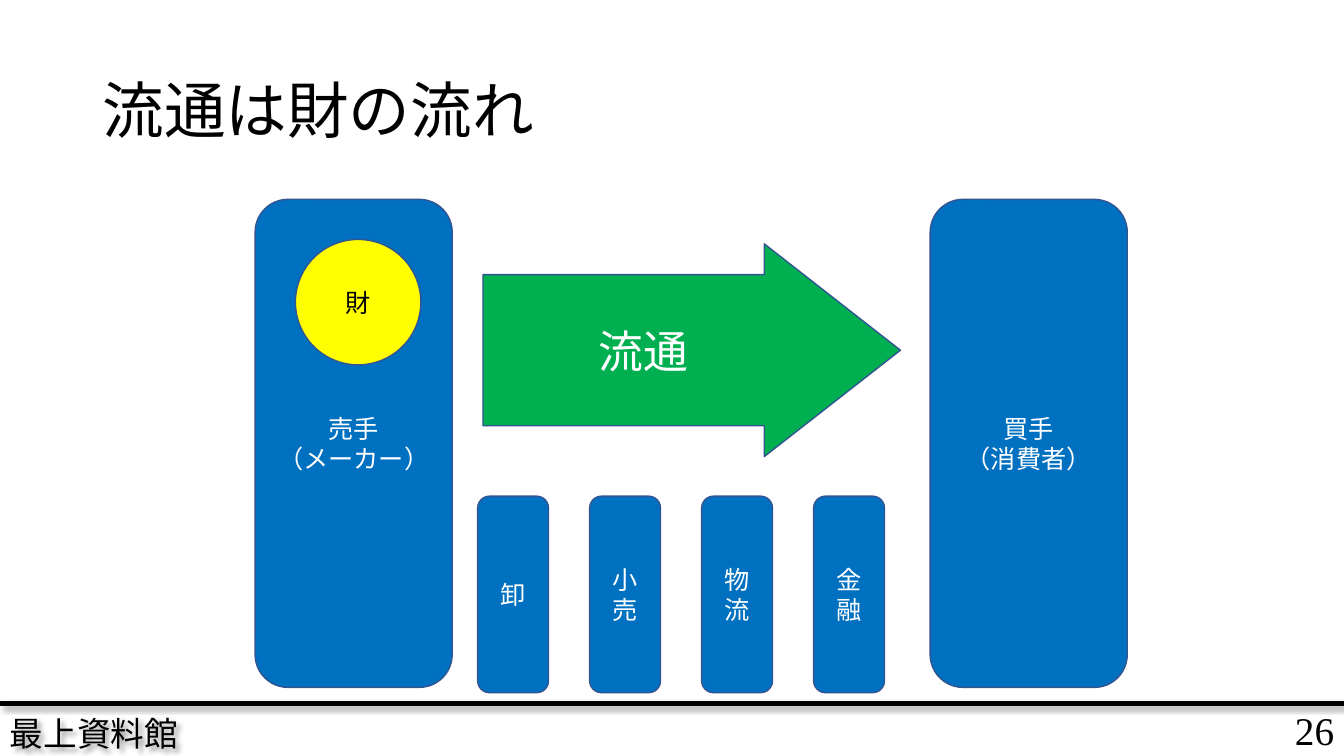
from dataclasses import dataclass

from lxml.etree import SubElement
from pptx import Presentation
from pptx.dml.color import RGBColor
from pptx.enum.lang import MSO_LANGUAGE_ID
from pptx.enum.shapes import MSO_CONNECTOR, MSO_SHAPE
from pptx.enum.text import MSO_ANCHOR, PP_ALIGN
from pptx.oxml.ns import qn
from pptx.util import Pt

# Content
TITLE = "流通は財の流れ"
PARTIES = [["売手", "（メーカー）"], ["買手", "（消費者）"]]
GOODS = "財"
FLOW = "流通"
SERVICES = ["卸", "小売", "物流", "金融"]
FOOTER = "最上資料館"
PAGE_NUMBER = "26"


@dataclass(frozen=True)
class Theme:
    blue: str = "0070C0"
    green: str = "00B050"
    yellow: str = "FFFF00"
    outline: str = "325491"
    black: str = "000000"
    white: str = "FFFFFF"
    body_font: str = "Times New Roman"
    title_font: str = "Noto Sans CJK JP"
    title_size: int = 44
    flow_size: int = 32
    number_size: int = 28
    footer_size: int = 24
    label_size: int = 18


THEME = Theme()

# Layout, in points
WIDTH, HEIGHT = 960, 540
RULE_TOP = 502.5
PARTY_LEFT, PARTY_TOP, PARTY_WIDTH, PARTY_HEIGHT = 182.2, 142.4, 140.8, 348.6
PARTY_PITCH = 482.2
SERVICE_LEFT, SERVICE_TOP, SERVICE_WIDTH, SERVICE_HEIGHT = 341.2, 354.4, 50.6, 140.4
SERVICE_PITCH = 80


def color(value):
    return RGBColor.from_string(value)


def write(shape, lines, size, ink, align=PP_ALIGN.CENTER, font=THEME.body_font):
    frame = shape.text_frame
    frame.word_wrap = True
    frame.vertical_anchor = MSO_ANCHOR.MIDDLE
    for index, line in enumerate(lines):
        paragraph = frame.add_paragraph() if index else frame.paragraphs[0]
        paragraph.alignment = align
        run = paragraph.add_run()
        run.text = line
        run.font.name = font
        run.font.size = Pt(size)
        run.font.color.rgb = color(ink)
        run.font.language_id = MSO_LANGUAGE_ID.JAPANESE
        SubElement(run.font._element, qn("a:ea"), typeface=THEME.title_font)


def add_block(slide, kind, box, fill, lines, size=THEME.label_size, ink=THEME.white):
    shape = slide.shapes.add_shape(kind, *map(Pt, box))
    shape.shadow.inherit = False
    shape.fill.solid()
    shape.fill.fore_color.rgb = color(fill)
    shape.line.color.rgb = color(THEME.outline)
    shape.line.width = Pt(1)
    write(shape, lines, size, ink)
    return shape


def add_label(slide, box, text, size, align):
    label = slide.shapes.add_textbox(*map(Pt, box))
    write(label, [text], size, THEME.black, align)
    return label


def add_shadow(shape):
    effects = SubElement(shape._element.spPr, qn("a:effectLst"))
    shadow = SubElement(effects, qn("a:outerShdw"), blurRad=str(Pt(4)), dist=str(Pt(3)),
                        dir="2700000", algn="tl", rotWithShape="0")
    black = SubElement(shadow, qn("a:srgbClr"), val=THEME.black)
    SubElement(black, qn("a:alpha"), val="40000")


def add_footer(slide):
    add_label(slide, (831.6, 502.6, 128.4, 36.7), PAGE_NUMBER, THEME.number_size, PP_ALIGN.RIGHT)
    footer = add_label(slide, (0, 507.6, 259.2, 32.4), FOOTER, THEME.footer_size, PP_ALIGN.LEFT)
    add_shadow(footer)
    rule = slide.shapes.add_connector(
        MSO_CONNECTOR.STRAIGHT, Pt(0), Pt(RULE_TOP), Pt(WIDTH), Pt(RULE_TOP))
    rule.line.color.rgb = color(THEME.black)
    rule.line.width = Pt(3)
    add_shadow(rule)


def add_title(slide):
    title = slide.shapes.title
    title.left, title.top, title.width, title.height = map(Pt, (66, 28.8, 828, 104.4))
    write(title, [TITLE], THEME.title_size, THEME.black, PP_ALIGN.LEFT, THEME.title_font)
    title.text_frame.paragraphs[0].line_spacing = 0.9


def main():
    presentation = Presentation()
    presentation.slide_width, presentation.slide_height = Pt(WIDTH), Pt(HEIGHT)
    slide = presentation.slides.add_slide(presentation.slide_layouts[5])

    # Footer and title
    add_footer(slide)
    add_title(slide)

    # Seller and buyer
    for index, lines in enumerate(PARTIES):
        box = (PARTY_LEFT + index * PARTY_PITCH, PARTY_TOP, PARTY_WIDTH, PARTY_HEIGHT)
        add_block(slide, MSO_SHAPE.ROUNDED_RECTANGLE, box, THEME.blue, lines)

    # Goods and their flow
    add_block(slide, MSO_SHAPE.OVAL, (211, 171, 89.6, 89.6), THEME.yellow, [GOODS],
              ink=THEME.black)
    arrow = add_block(slide, MSO_SHAPE.RIGHT_ARROW, (345, 174.2, 298.2, 152), THEME.green,
                      [FLOW], THEME.flow_size)
    arrow.adjustments[0], arrow.adjustments[1] = 0.71, 0.64

    # Services that carry the flow
    for index, name in enumerate(SERVICES):
        box = (SERVICE_LEFT + index * SERVICE_PITCH, SERVICE_TOP, SERVICE_WIDTH, SERVICE_HEIGHT)
        service = add_block(slide, MSO_SHAPE.ROUNDED_RECTANGLE, box, THEME.blue, [name])
        service.text_frame._txBody.bodyPr.set("vert", "wordArtVertRtl")

    presentation.save("out.pptx")


if __name__ == "__main__":
    main()
